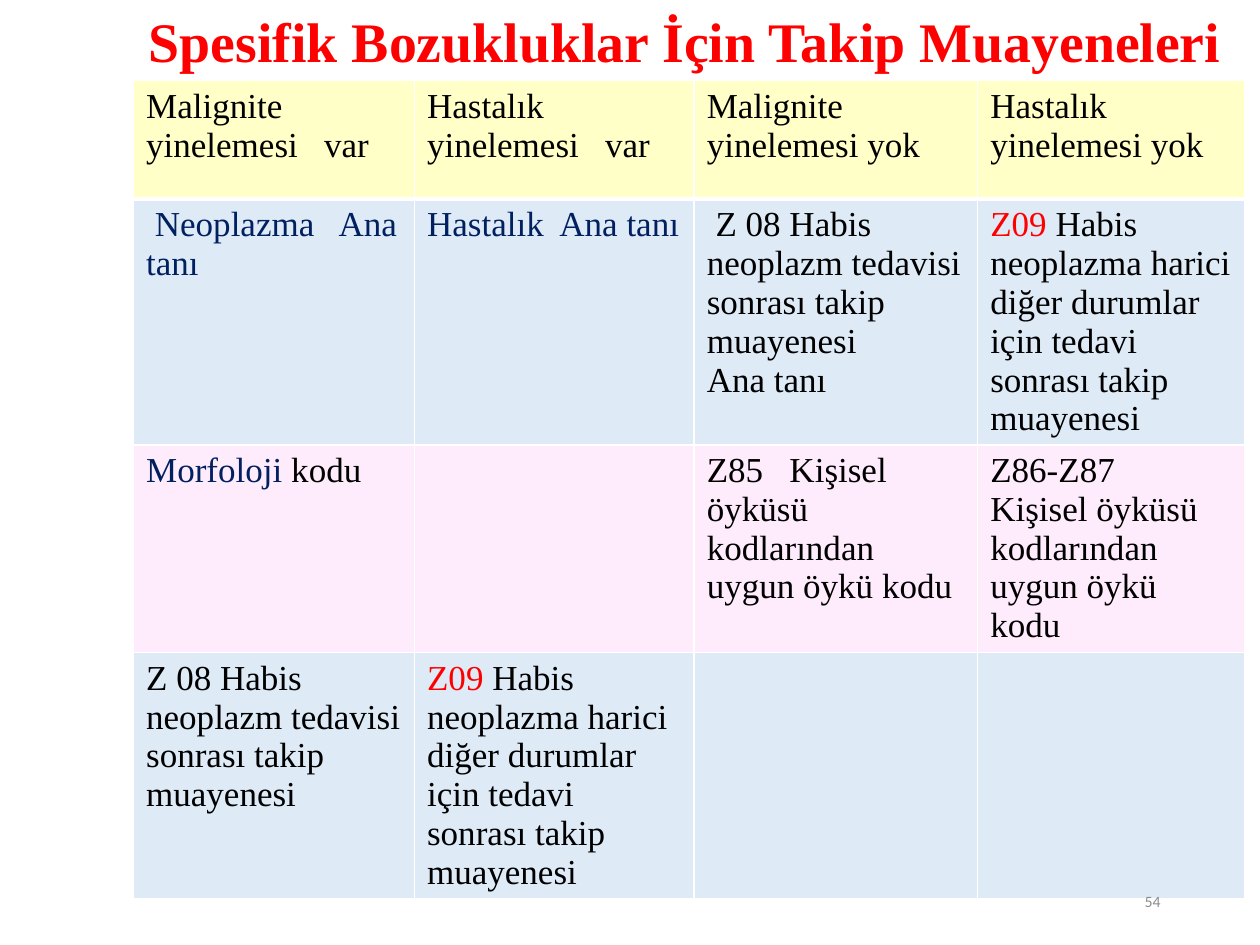
from dataclasses import dataclass

from lxml import etree
from pptx import Presentation
from pptx import util as u
from pptx.dml.color import RGBColor
from pptx.enum import text
from pptx.oxml.ns import qn


@dataclass(frozen=True)
class Theme:
    serif: str = "Times New Roman"
    sans: str = "Calibri"
    title_size: float = 31.9
    body_size: float = 20
    number_size: float = 9
    black: str = "000000"
    red: str = "FF0000"
    navy: str = "002060"
    grey: str = "8C8C8C"
    white: str = "FFFFFF"
    yellow: str = "FFFFC7"
    blue: str = "DEEBF7"
    pink: str = "FEECFC"


THEME = Theme()
COLUMN_WIDTHS = (2.23, 2.22, 2.25, 2.12)
# Each row is tall enough for its longest cell, so the table does not grow
ROW_HEIGHTS = (0.94, 1.95, 1.65, 1.95)
ROW_FILLS = (THEME.yellow, THEME.blue, THEME.pink, THEME.blue)

# A cell is a list of paragraphs; a paragraph is a list of (words, colour) runs
MALIGNANT_FOLLOW_UP = "Z 08 Habis neoplazm tedavisi sonrası takip muayenesi"
OTHER_FOLLOW_UP = [[
    ("Z09", THEME.red),
    (" Habis neoplazma harici diğer durumlar için tedavi sonrası takip muayenesi",
     THEME.black),
]]


def plain(*lines, color=THEME.black):
    return [[(line, color)] for line in lines]


CELLS = (
    (plain("Malignite", "yinelemesi   var"),
     plain("Hastalık yinelemesi   var"),
     plain("Malignite yinelemesi yok"),
     plain("Hastalık", "yinelemesi yok")),
    (plain(" Neoplazma   Ana tanı", color=THEME.navy),
     plain("Hastalık  Ana tanı", color=THEME.navy),
     plain(" " + MALIGNANT_FOLLOW_UP, "Ana tanı"),
     OTHER_FOLLOW_UP),
    ([[("Morfoloji", THEME.navy), (" kodu", THEME.black)]],
     [],
     plain("Z85   Kişisel öyküsü kodlarından uygun öykü kodu"),
     plain("Z86-Z87   Kişisel öyküsü kodlarından uygun öykü kodu")),
    (plain(MALIGNANT_FOLLOW_UP), OTHER_FOLLOW_UP, [], []),
)


def add_run(paragraph, words, font, size, color, bold=False):
    run = paragraph.add_run()
    run.text = words
    run.font.name = font
    run.font.size = u.Pt(size)
    run.font.bold = bold
    run.font.color.rgb = RGBColor.from_string(color)


def set_borders(cell, widths):
    """Draw white borders; widths maps a side (L, R, T, B) to points."""
    properties = cell._tc.get_or_add_tcPr()
    for index, (side, width) in enumerate(widths.items()):
        line = etree.Element(qn(f"a:ln{side}"), w=str(u.Pt(width)))
        fill = etree.SubElement(line, qn("a:solidFill"))
        etree.SubElement(fill, qn("a:srgbClr"), val=THEME.white)
        properties.insert(index, line)


def fill_cell(cell, paragraphs, fill):
    cell.fill.solid()
    cell.fill.fore_color.rgb = RGBColor.from_string(fill)
    frame = cell.text_frame
    for index, runs in enumerate(paragraphs):
        paragraph = frame.add_paragraph() if index else frame.paragraphs[0]
        for words, color in runs:
            add_run(paragraph, words, THEME.serif, THEME.body_size, color)


def add_title(slide):
    title = slide.shapes.title
    title.left, title.top = u.Inches(1.06), u.Inches(0)
    title.width, title.height = u.Inches(8.76), u.Inches(0.64)
    frame = title.text_frame
    frame.margin_left = frame.margin_right = u.Inches(0)
    frame.vertical_anchor = text.MSO_ANCHOR.MIDDLE
    paragraph = frame.paragraphs[0]
    paragraph.alignment = text.PP_ALIGN.CENTER
    add_run(paragraph, "Spesifik Bozukluklar İçin Takip Muayeneleri",
            THEME.serif, THEME.title_size, THEME.red, bold=True)


def add_slide_number(slide):
    box = slide.shapes.add_textbox(
        u.Inches(7.06), u.Inches(6.95), u.Inches(2.25), u.Inches(0.4))
    frame = box.text_frame
    frame.word_wrap = True
    frame.vertical_anchor = text.MSO_ANCHOR.MIDDLE
    paragraph = frame.paragraphs[0]
    paragraph.alignment = text.PP_ALIGN.RIGHT
    add_run(paragraph, "54", THEME.sans, THEME.number_size, THEME.grey)


def add_follow_up_table(slide):
    table = slide.shapes.add_table(
        len(ROW_HEIGHTS), len(COLUMN_WIDTHS), u.Inches(1.06), u.Inches(0.64),
        u.Inches(sum(COLUMN_WIDTHS)), u.Inches(sum(ROW_HEIGHTS))).table
    for column, width in zip(table.columns, COLUMN_WIDTHS):
        column.width = u.Inches(width)
    for row_index, (row, height) in enumerate(zip(table.rows, ROW_HEIGHTS)):
        row.height = u.Inches(height)
        # The edge below the header is thicker
        borders = {"L": 1, "R": 1,
                   "T": 3 if row_index == 1 else 1,
                   "B": 3 if row_index == 0 else 1}
        for cell, paragraphs in zip(row.cells, CELLS[row_index]):
            fill_cell(cell, paragraphs, ROW_FILLS[row_index])
            set_borders(cell, borders)


def main():
    presentation = Presentation()
    presentation.slide_width = u.Inches(10)
    presentation.slide_height = u.Inches(7.5)
    slide = presentation.slides.add_slide(presentation.slide_layouts[5])
    add_title(slide)
    add_follow_up_table(slide)
    # The number stands in front, so the table cannot cover it
    add_slide_number(slide)
    presentation.save("out.pptx")


if __name__ == "__main__":
    main()
